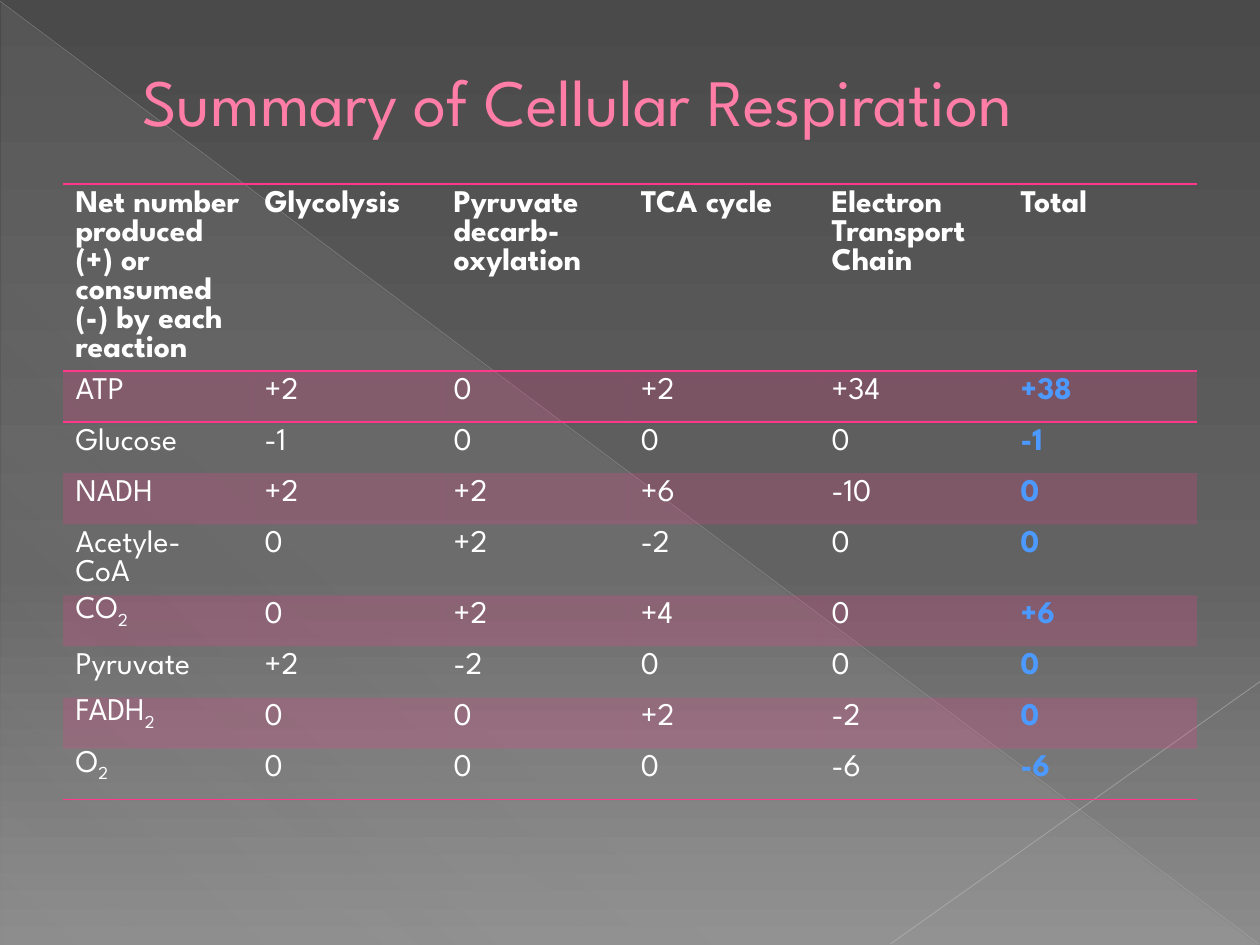
from pptx import Presentation
from pptx.dml.color import RGBColor
from pptx.enum.shapes import MSO_CONNECTOR, MSO_SHAPE
from pptx.enum.text import MSO_ANCHOR
from pptx.oxml import parse_xml
from pptx.oxml.ns import nsdecls, qn
from pptx.util import Pt

FONT = "League Spartan"
WHITE = RGBColor(0xFF, 0xFF, 0xFF)
BLUE = RGBColor(0x4C, 0x99, 0xFF)
PINK = RGBColor(0xFF, 0x38, 0x8C)
ROSE = RGBColor(0xFF, 0x7D, 0xA7)
WINE = RGBColor(0xB1, 0x27, 0x61)
DARK = RGBColor(0x4A, 0x4A, 0x4A)
MID = RGBColor(0x62, 0x62, 0x62)
PALE = RGBColor(0x8C, 0x8C, 0x8C)
MIST = RGBColor(0xD2, 0xD2, 0xD2)
ASH = RGBColor(0xBF, 0xBF, 0xBF)
SILVER = RGBColor(0xC6, 0xC6, 0xC6)

HEADS = [
    "Net number produced (+) or consumed (-) by each reaction",
    "Glycolysis",
    "Pyruvate decarb-oxylation",
    "TCA cycle",
    "Electron\nTransport\nChain",
    "Total",
]
ROWS = [
    ["ATP", "+2", "0", "+2", "+34", "+38"],
    ["Glucose", "-1", "0", "0", "0", "-1"],
    ["NADH", "+2", "+2", "+6", "-10", "0"],
    ["Acetyle-\nCoA", "0", "+2", "-2", "0", "0"],
    ["CO_2", "0", "+2", "+4", "0", "+6"],
    ["Pyruvate", "+2", "-2", "0", "0", "0"],
    ["FADH_2", "0", "0", "+2", "-2", "0"],
    ["O_2", "0", "0", "0", "-6", "-6"],
]
WIDTHS = [108, 108, 107, 109, 108, 108]
HEAD_H, ROW_H, TALL_H = 106.9, 29.2, 40.6
PITCH = 16.56


def set_alpha(node, alpha):
    """Make the solid colour inside a node see-through."""
    color = next(node.iter(qn("a:srgbClr")))
    color.append(parse_xml(f'<a:alpha {nsdecls("a")} val="{alpha * 1000}"/>'))


def set_grad(fill, root, stops, angle):
    """Give a fill its gradient stops of place, colour and alpha."""
    fill.gradient()
    old = next(root.iter(qn("a:gradFill")))
    marks = "".join(
        f'<a:gs pos="{pos * 1000}"><a:srgbClr val="{color}">'
        f'<a:alpha val="{alpha * 1000}"/></a:srgbClr></a:gs>'
        for pos, color, alpha in stops
    )
    new = parse_xml(
        f'<a:gradFill {nsdecls("a")} rotWithShape="1"><a:gsLst>{marks}</a:gsLst>'
        f'<a:lin ang="{angle * 60000}" scaled="0"/></a:gradFill>'
    )
    old.getparent().replace(old, new)


def add_run(para, text, size, color, bold=False):
    """Add one styled run."""
    run = para.add_run()
    run.text = text
    font = run.font
    font.name, font.size, font.bold = FONT, Pt(size), bold
    font.color.rgb = color
    return run


def add_line(slide, start, end, color, width, alpha):
    """Draw one faint straight line."""
    line = slide.shapes.add_connector(
        MSO_CONNECTOR.STRAIGHT, *map(Pt, start), *map(Pt, end)
    )
    line.line.color.rgb = color
    line.line.width = Pt(width)
    props = line.element.spPr
    set_alpha(props, alpha)
    props.append(parse_xml(f'<a:effectLst {nsdecls("a")}/>'))


def add_back(slide, x, y, w, h):
    """Paint the grey backdrop with its triangle and two lines."""
    stops = [(0, DARK, 100), (60, MID, 100), (100, PALE, 100)]
    set_grad(slide.background.fill, slide.element, stops, 90)
    wedge = slide.shapes.add_shape(
        MSO_SHAPE.RIGHT_TRIANGLE, Pt(x + 0.7), Pt(y + 1.4), Pt(w - 1.4), Pt(h - 1.4)
    )
    wedge.shadow.inherit = False
    wedge.line.fill.background()
    stops = [(0, MIST, 10), (70, MIST, 8), (100, MIST, 1)]
    set_grad(wedge.fill, wedge.element, stops, 133)
    right, base = x + w, y + h - 0.7
    add_line(slide, (x, y + 0.7), (right - 0.7, base), ASH, 0.39, 35)
    add_line(slide, (right, y + 389.5), (x + 509, base), SILVER, 0.47, 45)


def add_title(slide, x, y, w, h):
    """Place the outlined heading."""
    frame = slide.shapes.add_textbox(Pt(x), Pt(y), Pt(w), Pt(h)).text_frame
    frame.word_wrap = True
    frame.vertical_anchor = MSO_ANCHOR.MIDDLE
    para = frame.paragraphs[0]
    para._p.get_or_add_pPr().set("marL", str(Pt(38.2)))
    run = add_run(para, "Summary of Cellular Respiration", 37.8, ROSE)
    run._r.get_or_add_rPr().insert(0, make_edge("ln", WINE, 0.5))


def make_edge(tag, color, width):
    """Build a solid line element."""
    return parse_xml(
        f'<a:{tag} {nsdecls("a")} w="{Pt(width)}"><a:solidFill>'
        f'<a:srgbClr val="{color}"/></a:solidFill></a:{tag}>'
    )


def fill_cell(cell, text, color, bold, band, edges):
    """Write a cell, with text after an underscore set low."""
    frame = cell.text_frame
    for i, part in enumerate(text.split("\n")):
        para = frame.add_paragraph() if i else frame.paragraphs[0]
        para.line_spacing = Pt(PITCH)
        main, _, low = part.partition("_")
        add_run(para, main, 18, color, bold)
        if low:
            run = add_run(para, low, 18, color, bold)
            run._r.get_or_add_rPr().set("baseline", "-25000")
    props = cell._tc.get_or_add_tcPr()
    if band:
        cell.fill.solid()
        cell.fill.fore_color.rgb = PINK
        set_alpha(props, 20)
    else:
        cell.fill.background()
    for i, tag in enumerate(edges):
        props.insert(i, make_edge(tag, PINK, 1))


def add_grid(slide, x, y, w):
    """Place the table of net yields."""
    data = [HEADS] + ROWS
    highs = [HEAD_H] + [TALL_H if "\n" in row[0] else ROW_H for row in ROWS]
    frame = slide.shapes.add_table(
        len(data), len(HEADS), Pt(x), Pt(y), Pt(w), Pt(sum(highs))
    )
    table = frame.table
    table.first_row = table.horz_banding = False
    style = next(frame.element.iter(qn("a:tableStyleId")))
    style.text = "{2D5ABB26-0587-4C30-8999-92F81FD0307C}"
    for col, wide in zip(table.columns, WIDTHS):
        col.width = Pt(wide)
    lines = {0: ["lnT", "lnB"], 1: ["lnT"], len(ROWS): ["lnB"]}
    for i, (row, high) in enumerate(zip(data, highs)):
        table.rows[i].height = Pt(high)
        edges = lines.get(i, [])
        for j, text in enumerate(row):
            total = i > 0 and j == len(row) - 1
            color = BLUE if total else WHITE
            fill_cell(table.cell(i, j), text, color, total or i == 0, i % 2, edges)


def main():
    """Build and save the slide."""
    deck = Presentation()
    deck.slide_width, deck.slide_height = Pt(720), Pt(540)
    slide = deck.slides.add_slide(deck.slide_layouts[6])
    add_back(slide, 0, 0, 720, 540)
    add_title(slide, 36, 21, 648, 72)
    add_grid(slide, 36, 105.1, 648)
    deck.save("out.pptx")


if __name__ == "__main__":
    main()
